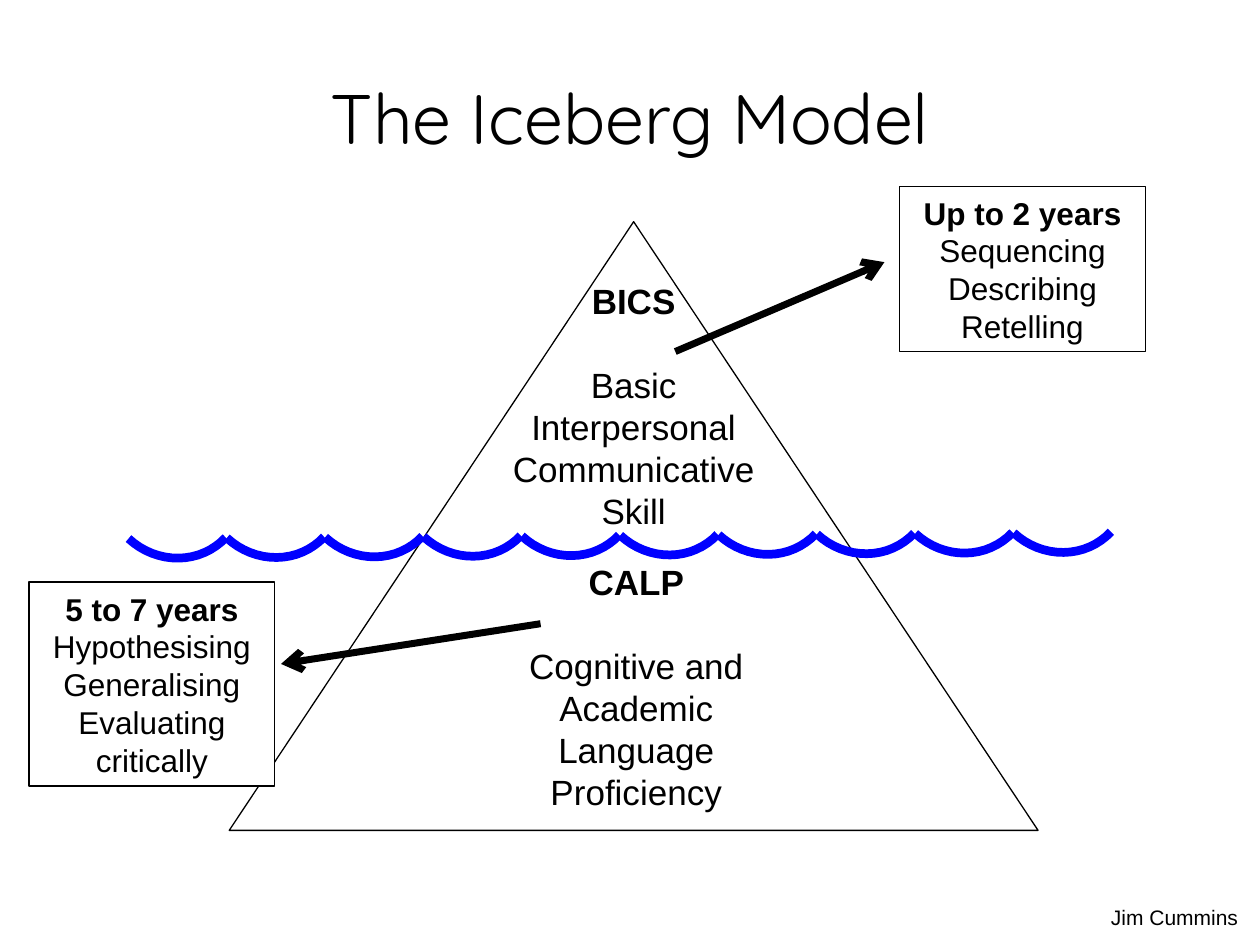
from math import cos, pi, sin

from lxml import etree
from pptx import Presentation
from pptx.dml.color import RGBColor
from pptx.enum.shapes import MSO_CONNECTOR, MSO_SHAPE
from pptx.enum.text import MSO_ANCHOR, MSO_AUTO_SIZE, PP_ALIGN
from pptx.oxml.ns import qn
from pptx.util import Pt

BLACK = RGBColor(0, 0, 0)
WHITE = RGBColor(255, 255, 255)
BLUE = RGBColor(0, 0, 255)
LEFT, CENTER = PP_ALIGN.LEFT, PP_ALIGN.CENTER
MIDDLE = MSO_ANCHOR.MIDDLE
GROW = MSO_AUTO_SIZE.SHAPE_TO_FIT_TEXT
RECT, PEAK = MSO_SHAPE.RECTANGLE, MSO_SHAPE.ISOSCELES_TRIANGLE
STRAIGHT = MSO_CONNECTOR.STRAIGHT


def write(frame, paras, size, align=CENTER, font="Arial"):
    """Fill a frame; each paragraph is a list of (text, bold) runs."""
    for i, runs in enumerate(paras):
        para = frame.paragraphs[0] if i == 0 else frame.add_paragraph()
        para.alignment = align
        for text, bold in runs:
            run = para.add_run()
            run.text = text
            run.font.name = font
            run.font.size = Pt(size)
            run.font.bold = bold
            run.font.color.rgb = BLACK


def panel(kind, x, y, w, h):
    """Add a white shape with a thin black outline."""
    shape = slide.shapes.add_shape(kind, Pt(x), Pt(y), Pt(w), Pt(h))
    shape.shadow.inherit = False
    shape.fill.solid()
    shape.fill.fore_color.rgb = WHITE
    shape.line.color.rgb = BLACK
    shape.line.width = Pt(0.75)
    return shape


deck = Presentation()
deck.slide_width, deck.slide_height = Pt(720), Pt(540)
slide = deck.slides.add_slide(deck.slide_layouts[5])

# Title
title = slide.shapes.title
title.left, title.top, title.width, title.height = Pt(36), Pt(21.6), Pt(648), Pt(90)
title.text_frame.vertical_anchor = MIDDLE
write(title.text_frame, [[("The Iceberg Model", False)]], 40, font="Quicksand")

# Iceberg
panel(PEAK, 131, 126.7, 462.2, 347.8)

# Labels above and below the water, and the author
labels = [
    (285.8, 156.2, 152.6, 151.2, 20, CENTER,
     ["BICS", "Basic", "Interpersonal", "Communicative", "Skill"]),
    (295.2, 316.8, 136.8, 151.2, 20, CENTER,
     ["CALP", "Cognitive and", "Academic", "Language", "Proficiency"]),
    (627.8, 513.4, 88.6, 21.6, 12, LEFT, ["Jim Cummins"]),
]
for x, y, w, h, size, align, lines in labels:
    box = slide.shapes.add_textbox(Pt(x), Pt(y), Pt(w), Pt(h))
    frame = box.text_frame
    frame.word_wrap = False
    frame.auto_size = GROW
    many = len(lines) > 1
    write(frame, [[(line, many and i == 0)] for i, line in enumerate(lines)],
          size, align)
    if many:
        frame.paragraphs[1].space_before = Pt(24)

# Water line: ten quarter arcs, turned to hang down
COUNT, STEPS = 10, 16
WIDE, HIGH = 38.2, 40.3
for n in range(COUNT):
    x, y = 82.1 + 56.2 * n, 287.3 - 0.36 * n
    arc = [(Pt(x + WIDE * sin(a)), Pt(y + HIGH * (1 - cos(a))))
           for a in (pi / 2 * k / STEPS for k in range(STEPS + 1))]
    pen = slide.shapes.build_freeform(*arc[0])
    pen.add_line_segments(arc[1:], close=False)
    wave = pen.convert_to_shape()
    wave.rotation = 132.8
    wave.shadow.inherit = False
    wave.fill.background()
    wave.line.color.rgb = BLUE
    wave.line.width = Pt(5)

# Time boxes, each with its arrow
notes = [
    (514.1, 106.6, 140.4, 94.3, (385.9, 200.9, 505.4, 149.8),
     [[("Up to 2 years", True)], [("Sequencing", False)],
      [("Describing", False)], [("Retelling", False)]]),
    (16.6, 332.6, 140.4, 116.6, (308.9, 356.4, 160.6, 379.4),
     [[("5 to 7 years ", True), ("Hypothesising", False)],
      [("Generalising", False)], [("Evaluating critically", False)]]),
]
for x, y, w, h, ends, paras in notes:
    note = panel(RECT, x, y, w, h)
    note.text_frame.word_wrap = True
    note.text_frame.auto_size = GROW
    write(note.text_frame, paras, 18)

    arrow = slide.shapes.add_connector(STRAIGHT, *map(Pt, ends))
    arrow.line.color.rgb = BLACK
    arrow.line.width = Pt(4)
    props = arrow.element.spPr
    etree.SubElement(props.find(qn("a:ln")), qn("a:tailEnd"), type="arrow")
    etree.SubElement(props, qn("a:effectLst"))

deck.save("out.pptx")
